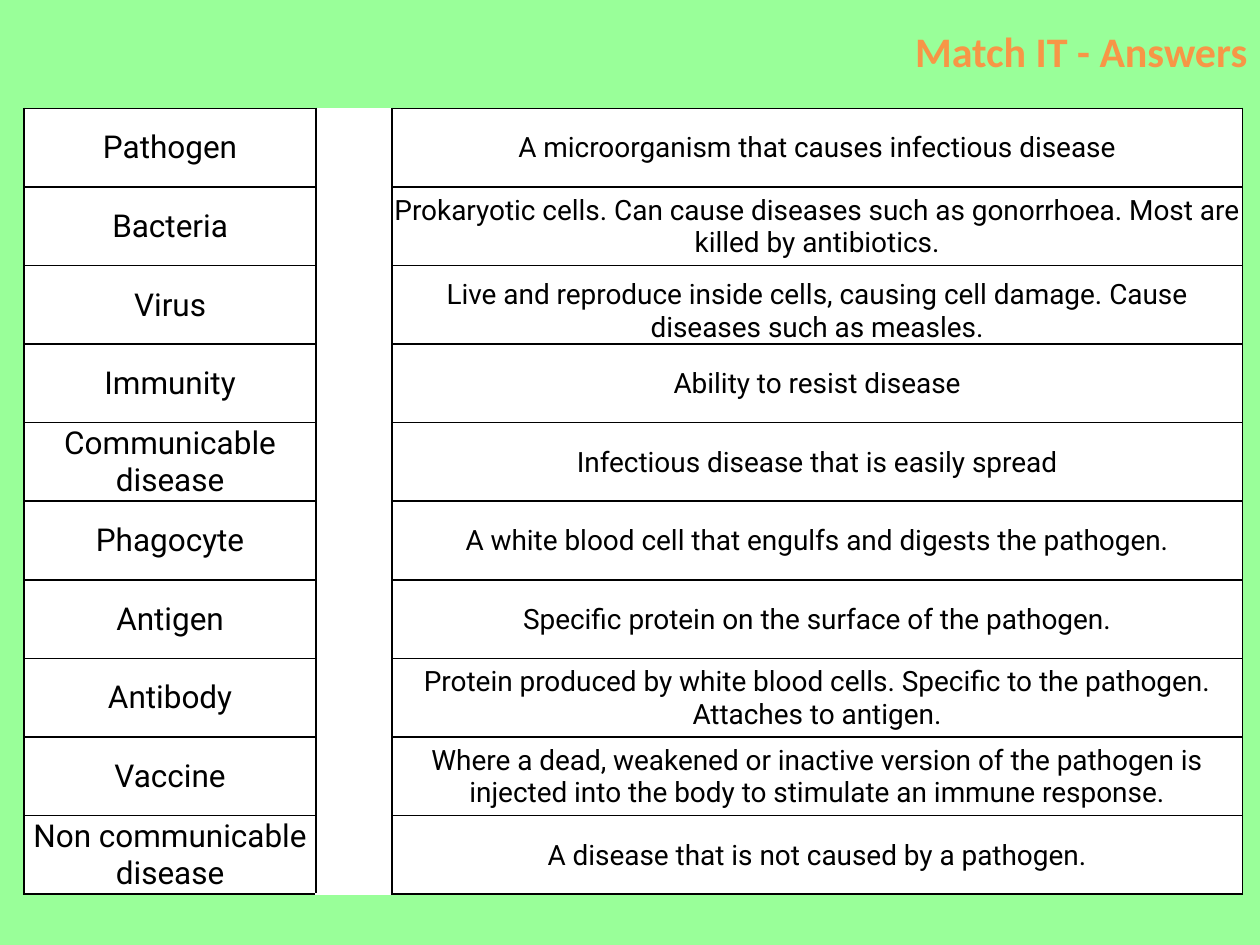
from lxml import etree
from pptx import Presentation
from pptx import util as u
from pptx.dml.color import RGBColor
from pptx.enum import text
from pptx.oxml import ns


def color(hex_value):
    return RGBColor.from_string(hex_value)


def add_borders(cell, sides):
    properties = cell._tc.get_or_add_tcPr()
    for side in sides:
        line = etree.SubElement(properties, ns.qn(f"a:ln{side}"), w=str(u.Pt(1)))
        fill = etree.SubElement(line, ns.qn("a:solidFill"))
        etree.SubElement(fill, ns.qn("a:srgbClr"), val="000000")


ANSWERS = [
    ("Pathogen", "A microorganism that causes infectious disease"),
    ("Bacteria", "Prokaryotic cells. Can cause diseases such as gonorrhoea. Most are killed by antibiotics."),
    ("Virus", "Live and reproduce inside cells, causing cell damage. Cause diseases such as measles."),
    ("Immunity", "Ability to resist disease"),
    ("Communicable disease", "Infectious disease that is easily spread"),
    ("Phagocyte", "A white blood cell that engulfs and digests the pathogen."),
    ("Antigen", "Specific protein on the surface of the pathogen."),
    ("Antibody", "Protein produced by white blood cells. Specific to the pathogen. Attaches to antigen."),
    ("Vaccine", "Where a dead, weakened or inactive version of the pathogen is injected into the body "
                "to stimulate an immune response."),
    ("Non communicable disease", "A disease that is not caused by a pathogen."),
]
COLUMN_WIDTHS = [2.32, 0.6, 6.75]
TABLE_HEIGHT = 6.24

presentation = Presentation()
presentation.slide_width = u.Inches(10)
presentation.slide_height = u.Inches(7.5)
slide = presentation.slides.add_slide(presentation.slide_layouts[5])
slide.background.fill.solid()
slide.background.fill.fore_color.rgb = color("99FF99")

# Title
title = slide.shapes.title
title.left, title.top = u.Inches(1.77), u.Inches(0.04)
title.width, title.height = u.Inches(8.23), u.Inches(0.72)
title.text_frame.text = "Match IT - Answers"
title.text_frame.vertical_anchor = text.MSO_ANCHOR.MIDDLE
paragraph = title.text_frame.paragraphs[0]
paragraph.alignment = text.PP_ALIGN.RIGHT
paragraph.font.name = "Calibri"
paragraph.font.size = u.Pt(24)
paragraph.font.bold = True
paragraph.font.color.rgb = color("F79646")

# Table of terms and definitions, with a blank column between them
table = slide.shapes.add_table(
    len(ANSWERS), len(COLUMN_WIDTHS), u.Inches(0.19), u.Inches(0.86),
    u.Inches(sum(COLUMN_WIDTHS)), u.Inches(TABLE_HEIGHT)).table
table.first_row = table.horz_banding = False
for column, width in zip(table.columns, COLUMN_WIDTHS):
    column.width = u.Inches(width)

for row, (term, definition) in enumerate(ANSWERS):
    table.rows[row].height = u.Inches(TABLE_HEIGHT / len(ANSWERS))
    for column, (words, size) in enumerate([(term, 18), ("", 16), (definition, 16)]):
        cell = table.cell(row, column)
        add_borders(cell, "LRTB" if words else "LR")
        cell.fill.solid()
        cell.fill.fore_color.rgb = color("FFFFFF")
        if not words:
            continue
        cell.text = words
        cell.vertical_anchor = text.MSO_ANCHOR.BOTTOM if term == "Virus" and column == 2 else text.MSO_ANCHOR.MIDDLE
        cell.margin_left = cell.margin_right = cell.margin_top = u.Inches(0.01)
        cell.margin_bottom = 0
        paragraph = cell.text_frame.paragraphs[0]
        paragraph.alignment = text.PP_ALIGN.CENTER
        paragraph.font.name = "Roboto"
        paragraph.font.size = u.Pt(size)
        paragraph.font.color.rgb = color("000000")

table.cell(0, 1).merge(table.cell(len(ANSWERS) - 1, 1))

presentation.save("out.pptx")
